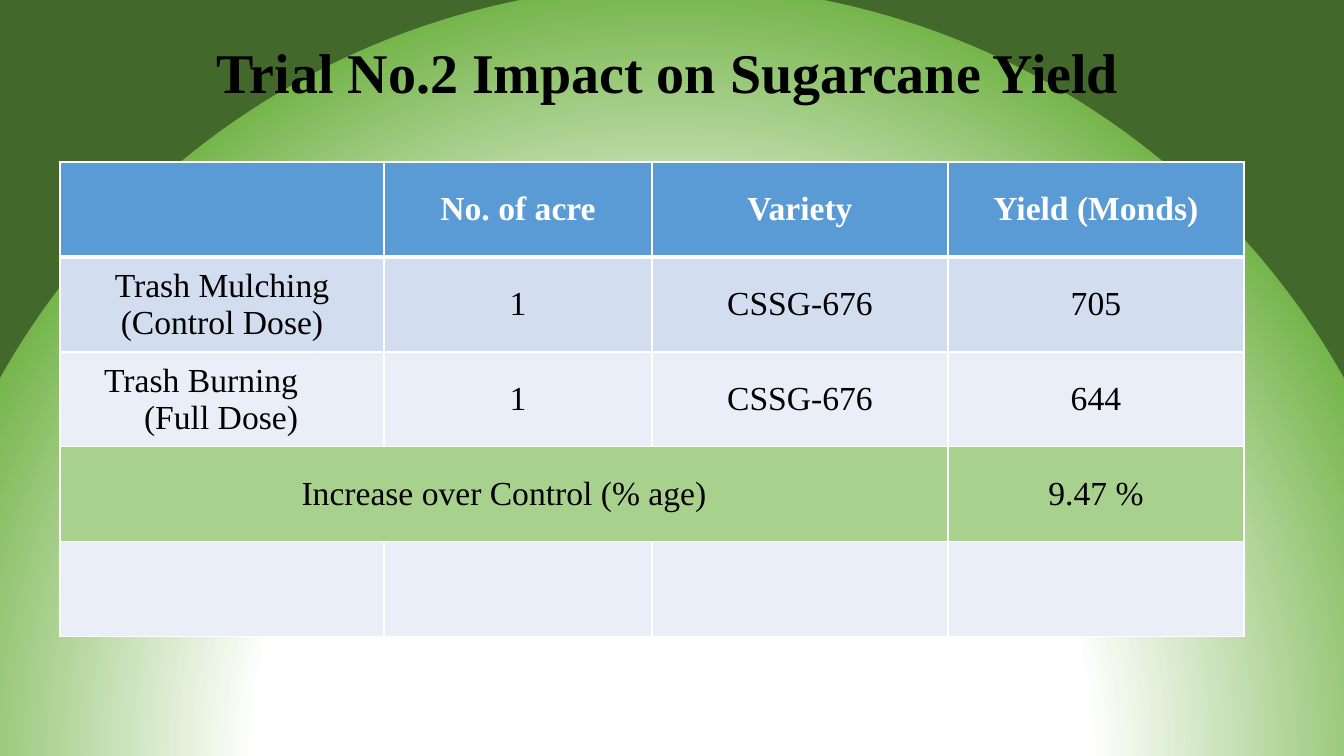
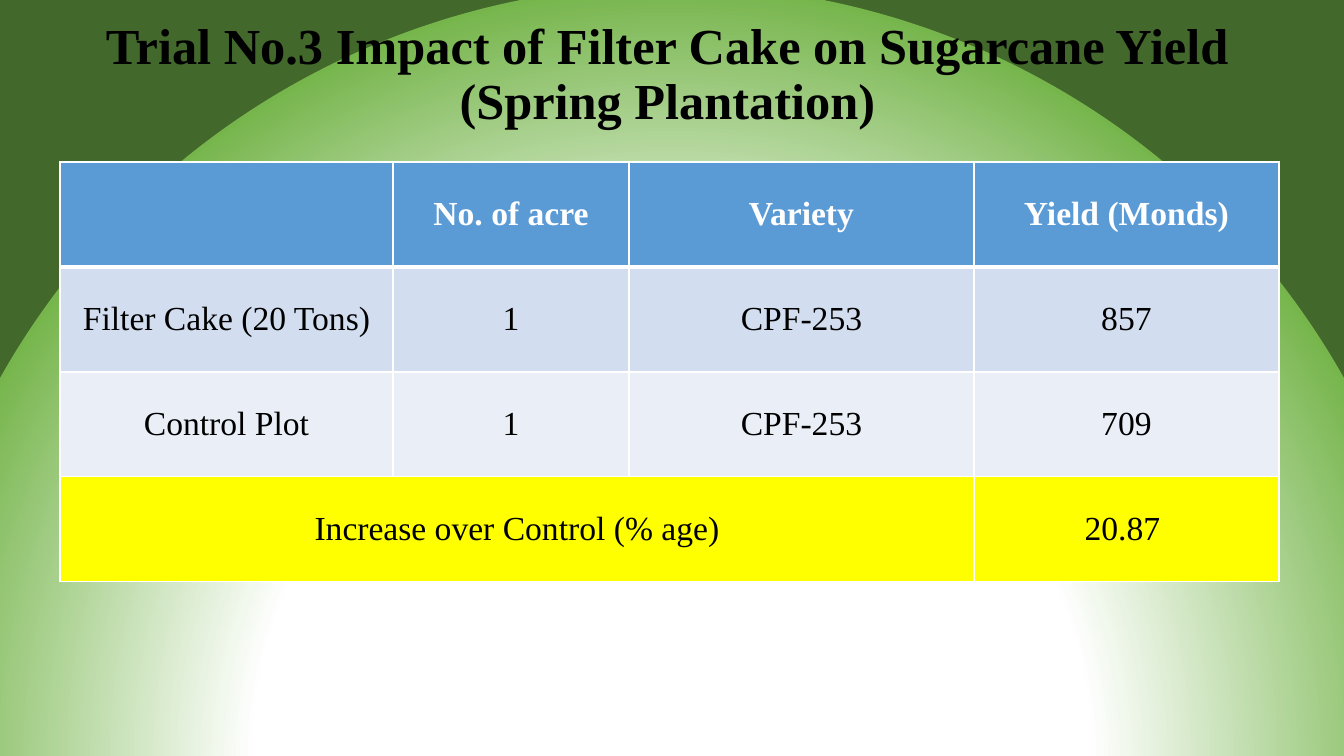
from dataclasses import dataclass

from pptx import Presentation
from pptx.dml.color import RGBColor
from pptx.enum.text import MSO_ANCHOR, PP_ALIGN
from pptx.oxml import parse_xml
from pptx.oxml.ns import nsdecls
from pptx.presentation import Presentation as Deck
from pptx.slide import Slide
from pptx.table import _Cell
from pptx.text.text import _Paragraph
from pptx.util import Emu, Pt

SLIDE_WIDTH, SLIDE_HEIGHT = 1344, 756
EMU_PER_PX = 12192000 / SLIDE_WIDTH
FONT = "Times New Roman"
TABLE_LEFT, TABLE_TOP = 60, 162
CELL_MARGIN = 9
COLORS = {
    "text": "000000",
    "white": "FFFFFF",
    "header": "5B9BD5",
    "band_dark": "D2DEEF",
    "band_light": "EAEFF7",
    "result_green": "A9D18E",
    "result_yellow": "FFFF00",
    "glow": "76B54C",
    "forest": "43682B",
}


@dataclass(frozen=True)
class CellText:
    text: str = ""
    align: PP_ALIGN = PP_ALIGN.CENTER
    margin_right: int = CELL_MARGIN


@dataclass(frozen=True)
class Row:
    fill: str
    cells: tuple[CellText, ...]
    label_span: int = 1


@dataclass(frozen=True)
class Trial:
    title: str
    title_size: int
    column_widths: tuple[int, ...]
    row_height: int
    rows: tuple[Row, ...]


def row(fill: str, *cells: str | CellText) -> Row:
    return Row(fill, tuple(CellText(c) if isinstance(c, str) else c for c in cells))


def result_row(fill: str, value: CellText) -> Row:
    """Row whose label spans every column but the last."""
    label = CellText("Increase over Control (% age)")
    return Row(fill, (label, CellText(), CellText(), value), label_span=3)


HEADER = row("header", "", "No. of acre", "Variety", "Yield (Monds)")
TRIALS = (
    Trial(
        "Trial No.2 Impact on Sugarcane Yield", 40, (324, 268, 296, 296), 95,
        (
            HEADER,
            row("band_dark", "Trash Mulching (Control Dose)", "1", "CSSG-676", "705"),
            row("band_light",
                CellText("Trash Burning\v(Full Dose)", PP_ALIGN.RIGHT, 86),
                "1", "CSSG-676", "644"),
            result_row("result_green", CellText("9.47 %")),
            row("band_light", "", "", "", ""),
        ),
    ),
    Trial(
        "Trial No.3 Impact of Filter Cake on Sugarcane Yield (Spring Plantation)",
        36, (333, 236, 345, 305), 105,
        (
            HEADER,
            row("band_dark", "Filter Cake (20 Tons)", "1", "CPF-253", "857"),
            row("band_light", "Control Plot", "1", "CPF-253", "709"),
            result_row("result_yellow", CellText("20.87", margin_right=17)),
        ),
    ),
)


def px(length: int) -> Emu:
    return Emu(round(length * EMU_PER_PX))


def set_background(deck: Deck) -> None:
    """Give the master a circular gradient centred below the slide."""
    fill = deck.slide_master.background.fill
    fill.solid()
    solid = deck.slide_master.element.xpath("p:cSld/p:bg/p:bgPr/a:solidFill")[0]
    gradient = parse_xml(
        f'<a:gradFill {nsdecls("a")} rotWithShape="1"><a:gsLst>'
        f'<a:gs pos="54000"><a:srgbClr val="{COLORS["white"]}">'
        '<a:alpha val="70000"/></a:srgbClr></a:gs>'
        f'<a:gs pos="100000"><a:srgbClr val="{COLORS["glow"]}"/></a:gs>'
        f'<a:gs pos="100000"><a:srgbClr val="{COLORS["forest"]}"/></a:gs>'
        '</a:gsLst><a:path path="circle">'
        '<a:fillToRect l="50000" t="130000" r="50000" b="-30000"/>'
        '</a:path></a:gradFill>'
    )
    solid.getparent().replace(solid, gradient)


def style_paragraph(para: _Paragraph, size: int, color: str, bold: bool,
                    align: PP_ALIGN = PP_ALIGN.CENTER) -> None:
    para.alignment = align
    for font in (para.font, *(span.font for span in para.runs)):
        font.name = FONT
        font.size = Pt(size)
        font.bold = bold
        font.color.rgb = RGBColor.from_string(COLORS[color])


def add_title(slide: Slide, text: str, size: int) -> None:
    box = slide.shapes.add_textbox(px(25), px(15), px(1285), px(121))
    frame = box.text_frame
    frame.word_wrap = True
    frame.vertical_anchor = MSO_ANCHOR.MIDDLE
    frame.text = text
    para = frame.paragraphs[0]
    para.line_spacing = 0.9
    style_paragraph(para, size, "text", bold=True)


def set_borders(cell: _Cell, top: int, bottom: int) -> None:
    properties = cell._tc.get_or_add_tcPr()
    for side, points in (("L", 1), ("R", 1), ("T", top), ("B", bottom)):
        properties.append(parse_xml(
            f'<a:ln{side} {nsdecls("a")} w="{Pt(points)}"><a:solidFill>'
            f'<a:srgbClr val="{COLORS["white"]}"/></a:solidFill></a:ln{side}>'
        ))


def fill_cell(cell: _Cell, content: CellText, fill: str, row_index: int) -> None:
    is_header = row_index == 0
    set_borders(cell, top=3 if row_index == 1 else 1, bottom=3 if is_header else 1)
    cell.fill.solid()
    cell.fill.fore_color.rgb = RGBColor.from_string(COLORS[fill])
    cell.vertical_anchor = MSO_ANCHOR.MIDDLE
    cell.margin_left = px(CELL_MARGIN)
    cell.margin_right = px(content.margin_right)
    cell.text_frame.text = content.text
    style_paragraph(cell.text_frame.paragraphs[0], 24,
                    "white" if is_header else "text", is_header, content.align)


def add_trial_table(slide: Slide, trial: Trial) -> None:
    table = slide.shapes.add_table(
        len(trial.rows), len(trial.column_widths), px(TABLE_LEFT), px(TABLE_TOP),
        px(sum(trial.column_widths)), px(trial.row_height * len(trial.rows)),
    ).table
    table.horz_banding = False
    for column, width in zip(table.columns, trial.column_widths):
        column.width = px(width)
    for row_index, entry in enumerate(trial.rows):
        table.rows[row_index].height = px(trial.row_height)
        for column_index, content in enumerate(entry.cells):
            fill_cell(table.cell(row_index, column_index), content, entry.fill, row_index)
        if entry.label_span > 1:
            table.cell(row_index, 0).merge(table.cell(row_index, entry.label_span - 1))


def main() -> None:
    deck = Presentation()
    deck.slide_width, deck.slide_height = px(SLIDE_WIDTH), px(SLIDE_HEIGHT)
    set_background(deck)
    blank = deck.slide_layouts[6]
    for trial in TRIALS:
        slide = deck.slides.add_slide(blank)
        add_title(slide, trial.title, trial.title_size)
        add_trial_table(slide, trial)
    deck.save("out.pptx")


if __name__ == "__main__":
    main()
